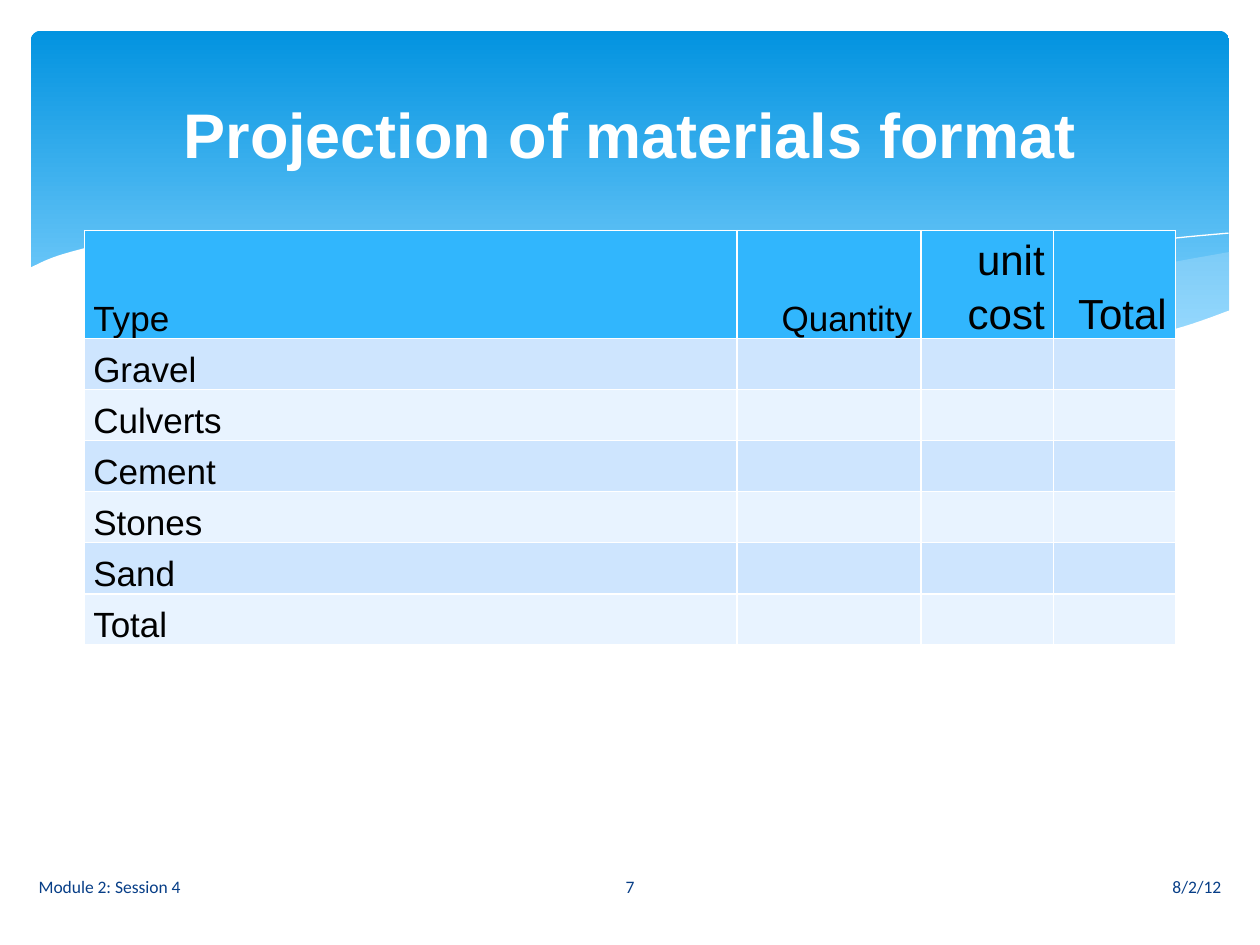
from dataclasses import dataclass
from itertools import chain
from typing import Optional

from lxml.etree import SubElement
from pptx import Presentation
from pptx.dml.color import RGBColor
from pptx.enum.shapes import MSO_SHAPE
from pptx.enum.text import MSO_ANCHOR, PP_ALIGN
from pptx.oxml import parse_xml
from pptx.oxml.ns import nsdecls, qn
from pptx.util import Cm, Pt

# Page measures in centimetres
PAGE_WIDTH, PAGE_HEIGHT = 25.4, 19.05
BANNER_MARGIN, BANNER_HEIGHT = 0.62, 6.86
TITLE_MARGIN, TITLE_TOP, TITLE_HEIGHT = 1.27, 0.94, 3.48
TABLE_LEFT, TABLE_TOP, ROW_HEIGHT = 1.7, 4.65, 1.03
FOOTER_MARGIN, FOOTER_TOP, FOOTER_HEIGHT = 0.53, 17.37, 1.02
FOOTER_SIDE_WIDTH, PAGE_NUMBER_WIDTH = 10.52, 3.23
CELL_MARGIN = 0.18

# Colours
WHITE, BLACK, NAVY, PALE_BLUE = "FFFFFF", "000000", "073E87", "C6E7FC"
BANNER_STOPS = ((0, "0293E0"), (0.9, "83D3FE"))
HEADER_FILL, BAND_FILLS = "31B6FD", ("CEE5FE", "E8F3FF")

CURVE_STEPS = 6  # straight pieces between two neighbouring curve points
Point = tuple[float, float]


@dataclass
class Wave:
    """Curves joined end to end; filled when a fill is given, else a white hairline."""
    curves: list[list[Point]]  # inches from the top left corner of the page
    fill: Optional[str] = None
    opacity: int = 100


@dataclass
class Heading:
    text: str
    width: float
    align: PP_ALIGN = PP_ALIGN.RIGHT
    size: int = 20
    spacing: Optional[float] = None


RIGHT_SWELL = Wave([
    [(9.76, 2), (9.21, 2.1), (8.61, 2.23), (7.79, 2.42), (7.06, 2.57), (6.61, 2.65)],
    [(6.61, 2.65), (7.19, 2.72), (7.69, 2.77), (8.14, 2.78), (8.63, 2.75),
     (9.05, 2.69), (9.42, 2.59), (9.76, 2.47)],
], PALE_BLUE, 29)
MIDDLE_SWELL = Wave([
    [(8.93, 2.73), (8.07, 2.6), (7.06, 2.4), (6.29, 2.22), (5.55, 2.05), (4.89, 1.94),
     (4.2, 1.87), (3.61, 1.85), (2.86, 1.91)],
    [(2.86, 1.91), (3.62, 2.03), (4.49, 2.22), (5.3, 2.4), (6.01, 2.55), (6.8, 2.68),
     (7.48, 2.76), (8.18, 2.78), (8.93, 2.73)],
], PALE_BLUE, 40)
LONG_CREST = Wave([
    [(3.09, 1.95), (3.53, 1.89), (4.16, 1.87), (4.89, 1.9), (5.82, 2), (6.65, 2.13),
     (7.6, 2.33), (8.31, 2.51), (9.07, 2.72)],
])
SHORT_CREST = Wave([
    [(6.13, 2.57), (6.72, 2.41), (7.48, 2.23), (8.06, 2.1), (8.66, 1.99), (9.24, 1.9),
     (9.75, 1.85)],
])
WHITE_FOREGROUND = Wave([
    [(9.77, 2.46), (9.4, 2.59), (8.99, 2.69), (8.5, 2.75), (8.09, 2.77), (7.61, 2.75),
     (6.88, 2.68), (6.03, 2.54), (5.29, 2.39), (4.47, 2.2), (3.65, 2.02), (2.92, 1.9),
     (2.3, 1.85), (1.77, 1.84), (1.32, 1.86), (0.85, 1.93), (0.46, 2.03), (0.23, 2.13)],
    [(0.23, 3.29), (9.77, 3.29)],
], WHITE)
WAVES = [RIGHT_SWELL, MIDDLE_SWELL, LONG_CREST, SHORT_CREST, WHITE_FOREGROUND]

HEADINGS = [
    Heading("Type", 13.16, align=PP_ALIGN.LEFT),
    Heading("Quantity", 3.71),
    Heading("unit cost", 2.67, size=24, spacing=1.15),
    Heading("Total", 2.46, size=24, spacing=1.15),
]
MATERIALS = ["Gravel", "Culverts", "Cement", "Stones", "Sand", "Total"]


def rgb(color: str) -> RGBColor:
    return RGBColor.from_string(color)


def write(frame, text: str, *, size: int, font: str = "Arial", color: str = BLACK,
          bold: bool = False, align: PP_ALIGN = PP_ALIGN.LEFT,
          spacing: Optional[float] = None) -> None:
    para = frame.paragraphs[0]
    para.alignment = align
    if spacing:
        para.line_spacing = spacing
    span = para.add_run()
    span.text = text
    span.font.size, span.font.name, span.font.bold = Pt(size), font, bold
    span.font.color.rgb = rgb(color)


def add_label(page, text: str, left: float, top: float, width: float, height: float,
              **text_format) -> None:
    box = page.shapes.add_textbox(Cm(left), Cm(top), Cm(width), Cm(height))
    box.text_frame.word_wrap = True
    box.text_frame.vertical_anchor = MSO_ANCHOR.MIDDLE
    write(box.text_frame, text, **text_format)


def draw_banner(page) -> None:
    banner = page.shapes.add_shape(
        MSO_SHAPE.ROUNDED_RECTANGLE, Cm(BANNER_MARGIN), Cm(BANNER_MARGIN),
        Cm(PAGE_WIDTH - 2 * BANNER_MARGIN), Cm(BANNER_HEIGHT))
    banner.adjustments[0] = 0.03
    banner.shadow.inherit = False
    banner.line.fill.background()
    banner.fill.gradient()
    banner.fill.gradient_angle = 270  # first colour on top
    for stop, (position, color) in zip(banner.fill.gradient_stops, BANNER_STOPS):
        stop.position = position
        stop.color.rgb = rgb(color)


def spline(before: float, start: float, end: float, after: float, t: float) -> float:
    """Catmull-Rom value between start and end, for t from 0 to 1."""
    return start + t / 2 * (
        end - before
        + t * (2 * before - 5 * start + 4 * end - after)
        + t * t * (3 * (start - end) + after - before))


def smooth(curve: list[Point]) -> list[Point]:
    """Fill in a curve through its points; two points remain a straight line."""
    if len(curve) == 2:
        return curve
    padded = [curve[0], *curve, curve[-1]]
    points = [curve[0]]
    for neighbours in zip(padded, padded[1:], padded[2:], padded[3:]):
        across, down = zip(*neighbours)
        for step in range(1, CURVE_STEPS + 1):
            t = step / CURVE_STEPS
            points.append((spline(*across, t), spline(*down, t)))
    return points


def draw_wave(page, wave: Wave) -> None:
    # The builder rounds to whole units, so points go in as EMU
    inch = Cm(2.54)
    start, *others = [(x * inch, y * inch)
                      for x, y in chain.from_iterable(map(smooth, wave.curves))]
    builder = page.shapes.build_freeform(*start)
    builder.add_line_segments(others, close=wave.fill is not None)
    shape = builder.convert_to_shape()
    shape.shadow.inherit = False
    if wave.fill is None:
        shape.fill.background()
        shape.line.color.rgb = rgb(WHITE)
        shape.line.width = Pt(0)
        return
    shape.line.fill.background()
    shape.fill.solid()
    shape.fill.fore_color.rgb = rgb(wave.fill)
    if wave.opacity < 100:
        color = shape.element.spPr.find(qn("a:solidFill"))[0]
        SubElement(color, qn("a:alpha"), val=str(wave.opacity * 1000))


def style_cell(cell, fill: str) -> None:
    cell.vertical_anchor = MSO_ANCHOR.BOTTOM
    cell.margin_left = cell.margin_right = Cm(CELL_MARGIN)
    cell.margin_top = cell.margin_bottom = 0
    cell.fill.solid()
    cell.fill.fore_color.rgb = rgb(fill)
    properties = cell._tc.get_or_add_tcPr()
    for index, side in enumerate("LRTB"):  # borders stand before the fill
        properties.insert(index, parse_xml(
            f'<a:ln{side} {nsdecls("a")} w="{Pt(1)}"><a:solidFill>'
            f'<a:srgbClr val="{WHITE}"/></a:solidFill></a:ln{side}>'))


def draw_table(page) -> None:
    row_count = len(MATERIALS) + 1
    width = sum(heading.width for heading in HEADINGS)
    table = page.shapes.add_table(row_count, len(HEADINGS), Cm(TABLE_LEFT), Cm(TABLE_TOP),
                                  Cm(width), Cm(row_count * ROW_HEIGHT)).table
    table.horz_banding = table.first_row = False
    for number, row in enumerate(table.rows):
        row.height = Cm(ROW_HEIGHT)
        for cell in row.cells:
            style_cell(cell, BAND_FILLS[(number - 1) % 2] if number else HEADER_FILL)
    for number, heading in enumerate(HEADINGS):
        table.columns[number].width = Cm(heading.width)
        write(table.cell(0, number).text_frame, heading.text, size=heading.size,
              align=heading.align, spacing=heading.spacing)
    for number, material in enumerate(MATERIALS, start=1):
        write(table.cell(number, 0).text_frame, material, size=20)


def draw_title(page) -> None:
    add_label(page, "Projection of materials format", TITLE_MARGIN, TITLE_TOP,
              PAGE_WIDTH - 2 * TITLE_MARGIN, TITLE_HEIGHT,
              size=36, color=WHITE, bold=True, align=PP_ALIGN.CENTER)


def draw_footer(page) -> None:
    right_side = PAGE_WIDTH - FOOTER_MARGIN - FOOTER_SIDE_WIDTH
    center = (PAGE_WIDTH - PAGE_NUMBER_WIDTH) / 2
    for text, left, width, align in (
            ("8/2/12", right_side, FOOTER_SIDE_WIDTH, PP_ALIGN.RIGHT),
            ("Module 2: Session 4", FOOTER_MARGIN, FOOTER_SIDE_WIDTH, PP_ALIGN.LEFT),
            ("7", center, PAGE_NUMBER_WIDTH, PP_ALIGN.CENTER)):
        add_label(page, text, left, FOOTER_TOP, width, FOOTER_HEIGHT,
                  size=10, font="Calibri", color=NAVY, align=align)


def main() -> None:
    deck = Presentation()
    deck.slide_width, deck.slide_height = Cm(PAGE_WIDTH), Cm(PAGE_HEIGHT)
    page = deck.slides.add_slide(deck.slide_layouts[6])
    draw_banner(page)
    for wave in WAVES:
        draw_wave(page, wave)
    draw_table(page)
    draw_title(page)
    draw_footer(page)
    deck.save("out.pptx")


if __name__ == "__main__":
    main()
